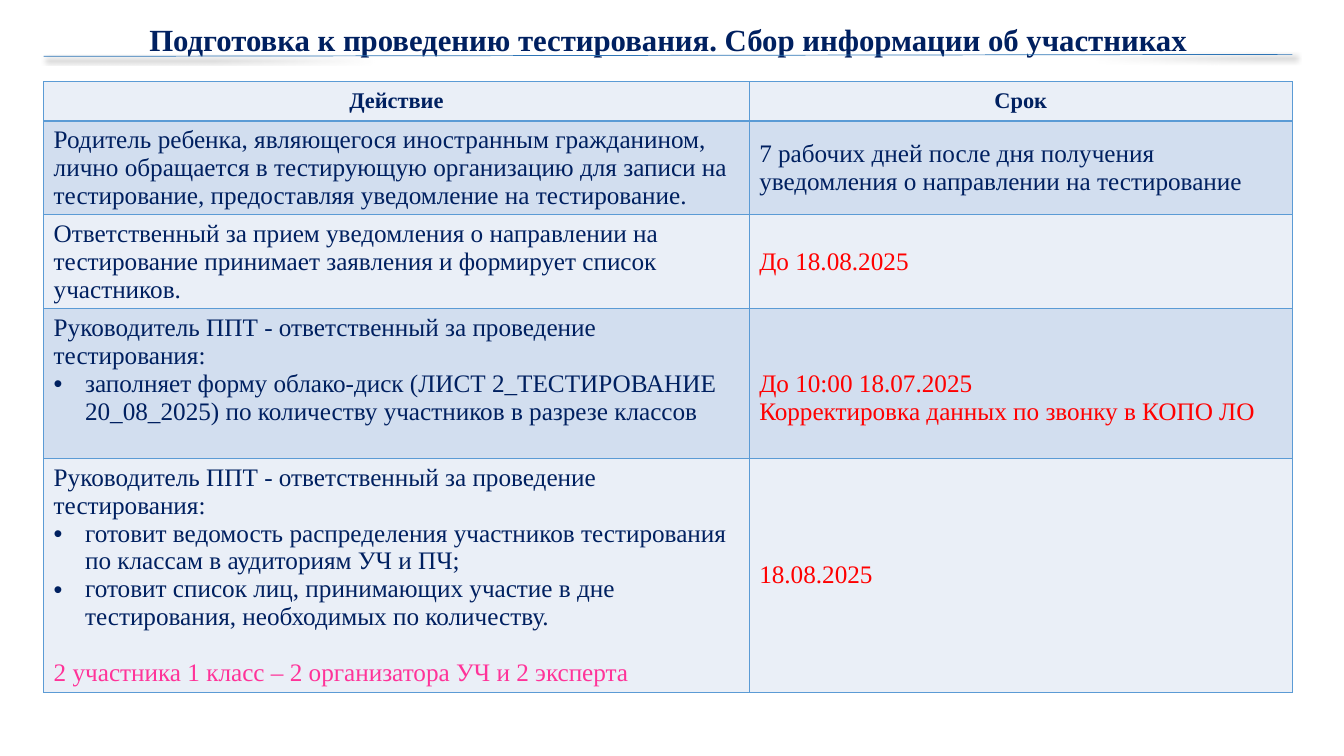
from lxml.etree import SubElement
from pptx import Presentation
from pptx.dml.color import RGBColor
from pptx.enum.shapes import MSO_CONNECTOR
from pptx.enum.text import MSO_ANCHOR, PP_ALIGN
from pptx.oxml.ns import qn
from pptx.util import Cm, Pt

NAVY = RGBColor(0x00, 0x20, 0x60)
RED = RGBColor(0xFF, 0x00, 0x00)
PINK = RGBColor(0xFF, 0x33, 0x99)
PALE = RGBColor(0xEA, 0xEF, 0xF7)
BLUE = RGBColor(0xD2, 0xDE, 0xEF)
BORDER = RGBColor(0x5B, 0x9B, 0xD5)
RULE = RGBColor(0x2E, 0x75, 0xB6)

HEADING = "Подготовка к проведению тестирования. Сбор информации об участниках"
HEADERS = ("Действие", "Срок")
LEADER = ("Руководитель ППТ - ответственный за проведение тестирования:", "plain")
STEPS = [
    ([("Родитель ребенка, являющегося иностранным гражданином, лично обращается в "
       "тестирующую организацию для записи на тестирование, предоставляя уведомление "
       "на тестирование.", "plain")],
     [("7 рабочих дней после дня получения уведомления о направлении на тестирование",
       "plain")]),
    ([("Ответственный за прием уведомления о направлении на тестирование принимает "
       "заявления и формирует список участников.", "plain")],
     [("До 18.08.2025", "date")]),
    ([LEADER,
      ("заполняет форму облако-диск (ЛИСТ 2_ТЕСТИРОВАНИЕ 20_08_2025) по количеству "
       "участников в разрезе классов", "bullet")],
     [("До 10:00 18.07.2025", "date"),
      ("Корректировка данных по звонку в КОПО ЛО", "date")]),
    ([LEADER,
      ("готовит ведомость распределения участников тестирования по классам в "
       "аудиториям УЧ и ПЧ;", "bullet"),
      ("готовит список лиц, принимающих участие в дне тестирования, необходимых "
       "по количеству.", "bullet"),
      ("2 участника 1 класс – 2 организатора УЧ и 2 эксперта", "note")],
     [("18.08.2025", "date")]),
]

FONTS = {
    "title": {"size": Pt(22), "bold": True},
    "header": {"size": Pt(16), "bold": True},
    "body": {"size": Pt(18), "bold": False},
}
INKS = {"plain": NAVY, "bullet": NAVY, "date": RED, "note": PINK}
LEFT, WIDTH = Cm(1.1), Cm(31.47)
COLUMN_WIDTHS = (Cm(17.78), Cm(13.69))
ROW_HEIGHTS = (Cm(0.99), Cm(2.36), Cm(2.36), Cm(3.78), Cm(5.87))
EXTRA_MARGINS = {(3, 0): {"margin_bottom": Cm(0.83)},
                 (3, 1): {"margin_top": Cm(0.83)}}


def set_all(target, values):
    for name, value in values.items():
        setattr(target, name, value)


def add_text(paragraph, text, role, ink):
    run = paragraph.add_run()
    run.text = text
    set_all(run.font, {"name": "Times New Roman", **FONTS[role]})
    run.font.color.rgb = ink


def add_bullet(paragraph):
    properties = paragraph._p.get_or_add_pPr()
    properties.set("marL", str(Cm(0.79)))
    properties.set("indent", str(-Cm(0.79)))
    SubElement(properties, qn("a:buFont"), typeface="Arial")
    SubElement(properties, qn("a:buChar"), char="•")


def add_borders(cell):
    properties = cell._tc.get_or_add_tcPr()
    for side in "LRTB":
        line = SubElement(properties, qn(f"a:ln{side}"), w=str(Pt(1)))
        fill = SubElement(line, qn("a:solidFill"))
        SubElement(fill, qn("a:srgbClr"), val=str(BORDER))


def fill_cell(cell, lines, role, align, shade):
    add_borders(cell)
    cell.fill.solid()
    cell.fill.fore_color.rgb = shade
    cell.vertical_anchor = MSO_ANCHOR.MIDDLE
    for index, (text, kind) in enumerate(lines):
        frame = cell.text_frame
        paragraph = frame.add_paragraph() if index else frame.paragraphs[0]
        paragraph.alignment = align
        if kind == "bullet":
            add_bullet(paragraph)
        if kind == "note":
            paragraph.space_before = Pt(20)
        add_text(paragraph, text, role, INKS[kind])


def add_title(slide):
    title = slide.shapes.title
    set_all(title, {"left": LEFT, "top": Cm(0), "width": WIDTH, "height": Cm(1.6)})
    set_all(title.text_frame, {"vertical_anchor": MSO_ANCHOR.BOTTOM, "word_wrap": True})
    paragraph = title.text_frame.paragraphs[0]
    set_all(paragraph, {"alignment": PP_ALIGN.CENTER, "line_spacing": 0.9})
    add_text(paragraph, HEADING, "title", NAVY)


def add_schedule(slide):
    schedule = slide.shapes.add_table(
        len(ROW_HEIGHTS), len(COLUMN_WIDTHS), LEFT, Cm(2.06), WIDTH, sum(ROW_HEIGHTS)).table
    set_all(schedule, {"first_row": False, "horz_banding": False})
    for column, width in zip(schedule.columns, COLUMN_WIDTHS):
        column.width = width
    for row, height in zip(schedule.rows, ROW_HEIGHTS):
        row.height = height
    for c, label in enumerate(HEADERS):
        fill_cell(schedule.cell(0, c), [(label, "plain")], "header", PP_ALIGN.CENTER, PALE)
    for r, step in enumerate(STEPS, 1):
        for c, lines in enumerate(step):
            cell = schedule.cell(r, c)
            fill_cell(cell, lines, "body", PP_ALIGN.LEFT, BLUE if r % 2 else PALE)
            set_all(cell, EXTRA_MARGINS.get((r, c), {}))


def add_rule(slide):
    rule = slide.shapes.add_connector(
        MSO_CONNECTOR.STRAIGHT, LEFT, Cm(1.42), LEFT + WIDTH, Cm(1.37))
    rule.line.color.rgb = RULE
    rule.line.width = Pt(0.5)
    effects = SubElement(rule._element.spPr, qn("a:effectLst"))
    shadow = SubElement(effects, qn("a:outerShdw"), blurRad=str(Pt(4)), dist=str(Pt(3)),
                        dir=str(45 * 60000), algn="tl", rotWithShape="0")
    tint = SubElement(shadow, qn("a:srgbClr"), val="000000")
    SubElement(tint, qn("a:alpha"), val="40000")


def main():
    deck = Presentation()
    set_all(deck, {"slide_width": Cm(33.87), "slide_height": Cm(19.05)})
    slide = deck.slides.add_slide(deck.slide_layouts[5])
    add_title(slide)
    add_schedule(slide)
    add_rule(slide)
    deck.save("out.pptx")


if __name__ == "__main__":
    main()
